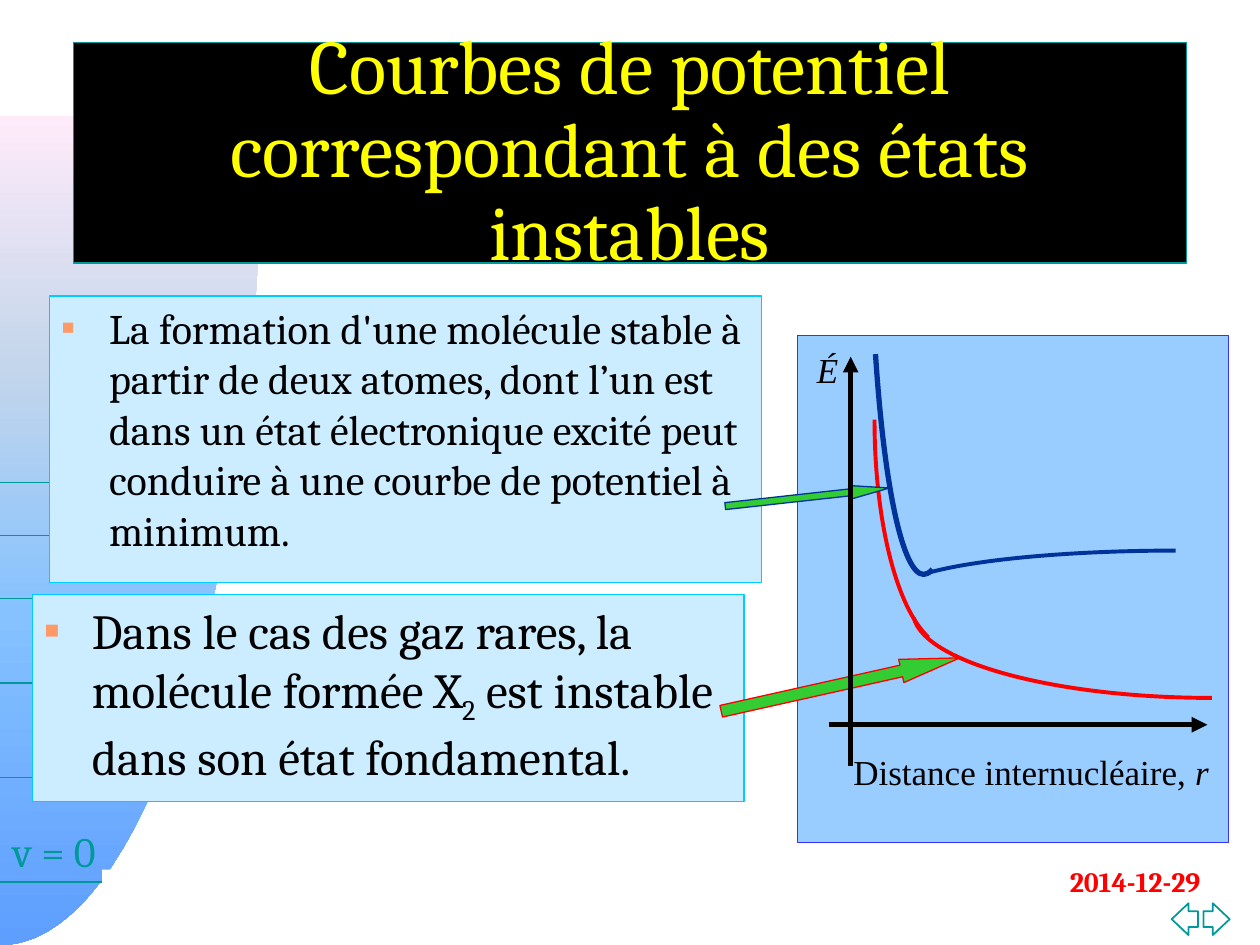
from lxml.etree import SubElement
from pptx import Presentation
from pptx.dml.color import RGBColor
from pptx.enum.shapes import MSO_CONNECTOR, MSO_SHAPE
from pptx.enum.text import MSO_ANCHOR, MSO_AUTO_SIZE, PP_ALIGN
from pptx.oxml import parse_xml
from pptx.oxml.ns import nsdecls, qn
from pptx.util import Cm, Pt

HUES = {
    "black": "010000", "white": "FFFFFF", "teal": "009999", "yellow": "FFFF00",
    "red": "FF0000", "navy": "003399", "green": "33CC33", "pale": "CCECFF",
    "cyan": "00CCFF", "sky": "99CCFF", "blue": "3333FF", "orange": "FF9966",
}
FADE = [(0, "FFEBFA"), (30, "C4D6EB"), (60, "85C2FF"), (100, "5E9EFF")]
RULES = [(2.11, 17.78), (3.18, 15.67), (3.81, 13.77),
         (4.24, 12.07), (4.45, 10.8), (4.65, 9.73)]
HEAD = {"name": "Cambria", "size": Pt(44)}
BODY = {"name": "Cambria", "size": Pt(28)}
NOTE = {"name": "Cambria", "size": Pt(24)}
DATE = {"name": "Cambria", "size": Pt(16), "bold": True}
AXIS = {"name": "Times New Roman", "size": Pt(20)}


def hue(name):
    """Return a named colour."""
    return RGBColor.from_string(HUES[name])


def paint(shape, fill=None, line=None, width=0.75):
    """Set the fill and outline of a shape."""
    if fill:
        shape.fill.solid()
        shape.fill.fore_color.rgb = hue(fill)
    else:
        shape.fill.background()
    if line:
        shape.line.color.rgb = hue(line)
        shape.line.width = Pt(width)
    else:
        shape.line.fill.background()


def add_form(slide, kind, box, fill, line=None, width=0.75):
    """Add a preset shape."""
    shape = slide.shapes.add_shape(kind, *map(Cm, box))
    shape.shadow.inherit = False
    paint(shape, fill, line, width)
    return shape


def add_arrow(slide, box, turn, line, point):
    """Add a green block arrow turned by an angle."""
    shape = add_form(slide, MSO_SHAPE.RIGHT_ARROW, box, "green", line)
    shape.adjustments[1] = point
    shape.rotation = turn


def add_line(slide, start, end, color, width=0.75, tip=False):
    """Add a straight line, with an arrowhead if asked."""
    line = slide.shapes.add_connector(
        MSO_CONNECTOR.STRAIGHT, *map(Cm, start + end))
    line.line.color.rgb = hue(color)
    line.line.width = Pt(width)
    props = line.element.spPr
    if tip:
        SubElement(props.find(qn("a:ln")), qn("a:tailEnd"), type="triangle")
    SubElement(props, qn("a:effectLst"))


def add_curve(slide, nodes, corner, line=None, width=0.75, close=False):
    """Add chained cubic curves in a frame that reaches the corner."""
    spots = [(Cm(x), Cm(y)) for x, y in nodes + [corner]]
    form = slide.shapes.build_freeform(*spots[0])
    form.add_line_segments(spots[1:], close=close)
    shape = form.convert_to_shape()
    shape.shadow.inherit = False
    paint(shape, None, line, width)
    legs = list(shape.element.iter(qn("a:lnTo")))
    for i in range(0, len(nodes) - 1, 3):
        bend = parse_xml(f'<a:cubicBezTo {nsdecls("a")}/>')
        legs[i].addprevious(bend)
        for leg in legs[i:i + 3]:
            bend.append(leg[0])
            leg.getparent().remove(leg)
    if not close:
        last = legs[len(nodes) - 1]
        last.getparent().remove(last)
    return shape


def add_fade(shape):
    """Give a shape the downward colour fade."""
    stops = "".join(
        f'<a:gs pos="{pos * 1000}"><a:srgbClr val="{tone}"/></a:gs>'
        for pos, tone in FADE)
    grad = parse_xml(f'<a:gradFill {nsdecls("a")}><a:gsLst>{stops}</a:gsLst>'
                     '<a:lin ang="5400000" scaled="0"/></a:gradFill>')
    props = shape.element.spPr
    props.replace(props.find(qn("a:noFill")), grad)


def add_mark(par):
    """Give a paragraph a small square bullet and hanging indent."""
    props = par._p.get_or_add_pPr()
    props.set("marL", str(Cm(0.95)))
    props.set("indent", str(-Cm(0.95)))
    tint = SubElement(props, qn("a:buClr"))
    SubElement(tint, qn("a:srgbClr"), val=HUES["orange"])
    SubElement(props, qn("a:buSzPct"), val="50000")
    SubElement(props, qn("a:buFont"), typeface="Arial")
    SubElement(props, qn("a:buChar"), char="■")


def write(shape, runs, style, color, align=PP_ALIGN.LEFT, mark=False,
          anchor=MSO_ANCHOR.TOP, wrap=True):
    """Fill a shape with one paragraph of (text, extra format) runs."""
    frame = shape.text_frame
    traits = {
        "word_wrap": wrap, "auto_size": MSO_AUTO_SIZE.NONE,
        "vertical_anchor": anchor,
        "margin_left": Cm(0.25), "margin_right": Cm(0.25),
        "margin_top": Cm(0.13), "margin_bottom": Cm(0.13),
    }
    for key, value in traits.items():
        setattr(frame, key, value)
    par = frame.paragraphs[0]
    if mark:
        add_mark(par)
    par.alignment = align
    par.space_before = Pt(0)
    for text, extra in runs:
        run = par.add_run()
        run.text = text
        run.font.color.rgb = hue(color)
        for key, value in {**style, **extra}.items():
            setattr(run.font, key, value)
    return par


def add_text(slide, box, runs, style, color, align, wrap=True):
    """Add a plain text box."""
    shape = slide.shapes.add_textbox(*map(Cm, box))
    write(shape, runs, style, color, align, wrap=wrap)


def place(shape, box):
    """Move a placeholder to a box, in front of all else."""
    for key, value in zip(("left", "top", "width", "height"), box):
        setattr(shape, key, Cm(value))
    shape.element.getparent().append(shape.element)


def draw_back(slide):
    """Draw the backdrop with its arrows, rules and date."""
    for kind, left in ((MSO_SHAPE.LEFT_ARROW, 23.62),
                       (MSO_SHAPE.RIGHT_ARROW, 24.26)):
        arrow = add_form(slide, kind, (left, 18.21, 0.53, 0.64),
                         "white", "teal", 1)
        arrow.adjustments[1] = 0.64
    add_fade(add_curve(
        slide, [(0, 19.05), (2.92, 19.05), (5.28, 11.56), (5.28, 2.34)],
        (0, 2.34), close=True))
    for right, top in RULES:
        add_line(slide, (0, top), (right, top), "teal")
    add_text(slide, (0, 16.51, 2.26, 1.27), [("v = 0", {})], NOTE, "teal",
             PP_ALIGN.LEFT, wrap=False)
    add_text(slide, (20.64, 17.3, 3.81, 0.94), [("2014-12-29", {})], DATE,
             "red", PP_ALIGN.RIGHT)
    add_form(slide, MSO_SHAPE.RECTANGLE, (2.06, 17.53, 4.47, 1.19), "white")


def draw_graph(slide):
    """Draw both potential curves, their arrows and the axes."""
    add_arrow(slide, (14.48, 13.56, 4.93, 0.48), 347.4, "red", 2.52)
    add_curve(slide, [(24.43, 14.07), (21.29, 14.07), (18.64, 13.36),
                      (18.42, 12.45)], (24.43, 12.32), "red", 2.25)
    add_curve(slide, [(18.72, 12.85), (18.06, 12.24), (17.63, 10.46),
                      (17.63, 8.46)], (19.2, 8.46), "red", 2.25)
    add_curve(slide, [(18.8, 11.48), (18.72, 11.56), (18.67, 11.58),
                      (18.62, 11.58), (18.21, 11.58), (17.83, 9.88),
                      (17.65, 7.14)], (18.62, 3.33), "navy", 3)
    add_arrow(slide, (14.61, 9.88, 3.33, 0.28), 353.7, "navy", 2.9)
    add_curve(slide, [(23.7, 11.1), (21.59, 11.1), (19.63, 11.28),
                      (18.67, 11.56)], (23.7, 11.94), "navy", 2.25)
    add_line(slide, (16.71, 14.61), (24.34, 14.61), "black", 3, True)
    add_line(slide, (17.15, 15.44), (17.15, 7.19), "black", 3, True)
    add_text(slide, (16.85, 15, 7.87, 1.09),
             [("Distance internucléaire, ", {}), ("r", {"italic": True})],
             AXIS, "black", PP_ALIGN.CENTER)
    add_text(slide, (15.77, 6.89, 1.83, 1.09), [("É", {"italic": True})],
             AXIS, "black", PP_ALIGN.CENTER)


def main():
    """Build and save the slide."""
    deck = Presentation()
    deck.slide_width, deck.slide_height = Cm(25.4), Cm(19.05)
    slide = deck.slides.add_slide(deck.slide_layouts[1])
    draw_back(slide)
    title, body = slide.shapes.title, slide.placeholders[1]
    place(title, (1.48, 0.85, 22.44, 4.45))
    paint(title, "black", "teal")
    par = write(title, [("Courbes de potentiel correspondant à des états "
                         "instables", {})], HEAD, "yellow",
                PP_ALIGN.CENTER, anchor=MSO_ANCHOR.MIDDLE)
    par.line_spacing = 0.9
    place(body, (0.65, 11.98, 14.35, 4.18))
    paint(body, "pale", "cyan")
    par = write(body, [("Dans le cas des gaz rares, la molécule formée X", {}),
                       ("2", {}), (" est instable dans son état fondamental.",
                                   {})], BODY, "black", mark=True)
    par.runs[1]._r.get_or_add_rPr().set("baseline", "-25000")
    add_form(slide, MSO_SHAPE.RECTANGLE, (16.08, 6.77, 8.69, 10.21),
             "sky", "blue")
    note = add_form(slide, MSO_SHAPE.RECTANGLE, (1, 5.97, 14.35, 5.77),
                    "pale", "cyan")
    write(note, [("La formation d'une molécule stable à partir de deux atomes, "
                  "dont l’un est dans un état électronique excité peut "
                  "conduire à une courbe de potentiel à minimum.", {})],
          NOTE, "black", mark=True)
    draw_graph(slide)
    deck.save("out.pptx")


if __name__ == "__main__":
    main()
